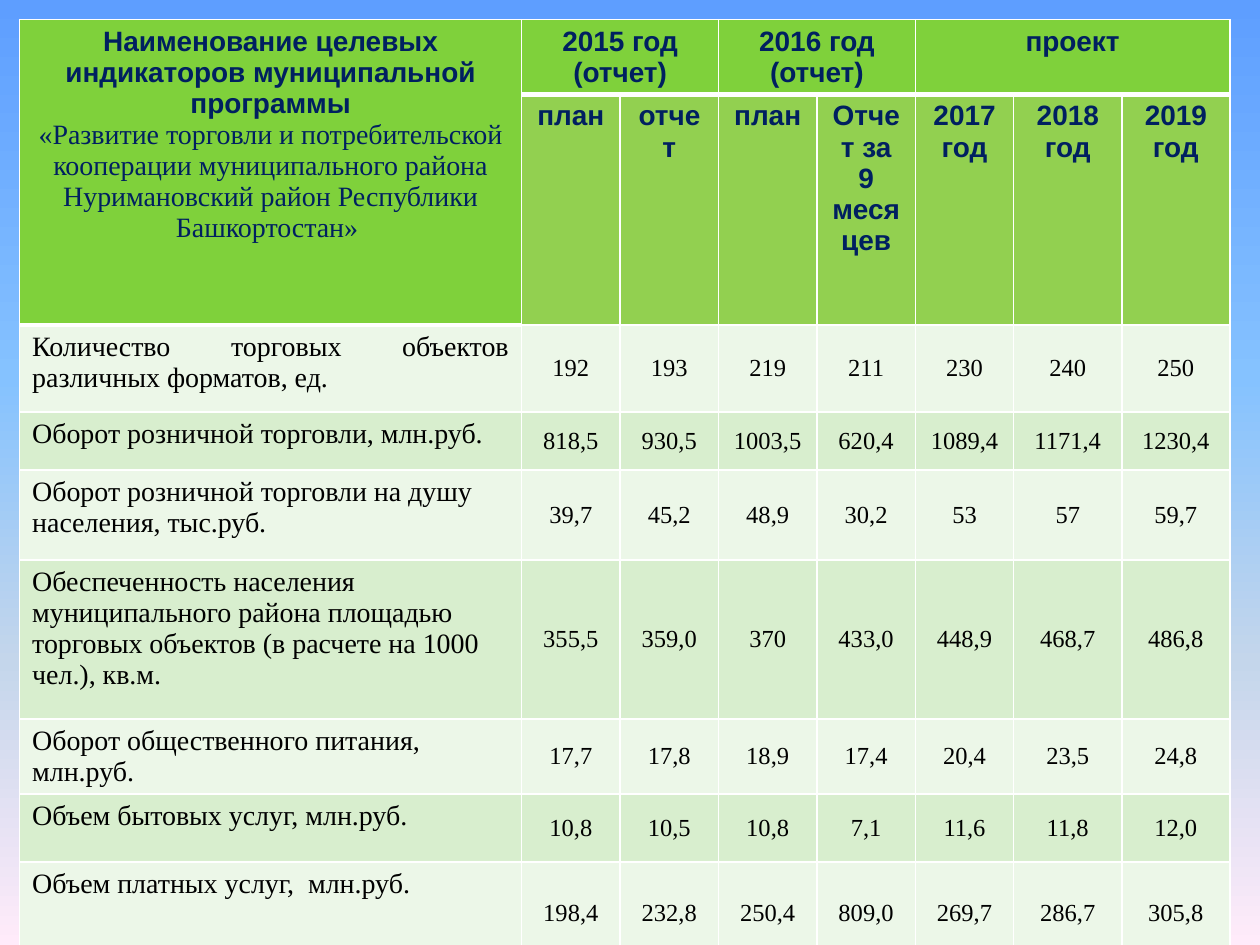
from lxml.etree import SubElement as Sub
from pptx import Presentation
from pptx.dml.color import RGBColor as RGB
from pptx.enum.text import MSO_ANCHOR as ANCHOR, PP_ALIGN as ALIGN
from pptx.oxml.ns import qn
from pptx.util import Pt

COLORS = {"header": "7FD13B", "subheader": "92D050", "light": "ECF7E8", "dark": "D8EECE",
          "navy": "002060", "black": "000000", "border": "FFFFFF"}
SKY = [(0, "5E9EFF"), (40, "85C2FF"), (70, "C4D6EB"), (100, "FFEBFA")]
SANS, SERIF = "Arial", "Times New Roman"

TITLE = "Наименование целевых индикаторов муниципальной программы"
PROGRAM = ("«Развитие торговли и потребительской кооперации муниципального района "
           "Нуримановский район Республики Башкортостан» ")
GROUPS = [("2015 год (отчет)", 1, 2), ("2016 год (отчет)", 3, 4), ("проект", 5, 7)]
SUBHEADS = ["план", "отчет", "план", "Отчет за 9 меся цев", "2017 год", "2018 год", "2019 год"]
INDICATORS = [
    ("Количество торговых объектов различных форматов, ед.",
     ["192", "193", "219", "211", "230", "240", "250"]),
    ("Оборот розничной торговли, млн.руб.",
     ["818,5", "930,5", "1003,5", "620,4", "1089,4", "1171,4", "1230,4"]),
    ("Оборот розничной торговли на душу населения, тыс.руб.",
     ["39,7", "45,2", "48,9", "30,2", "53", "57", "59,7"]),
    ("Обеспеченность населения муниципального района площадью торговых объектов "
     "(в расчете на 1000 чел.), кв.м.",
     ["355,5", "359,0", "370", "433,0", "448,9", "468,7", "486,8"]),
    ("Оборот общественного питания, млн.руб.",
     ["17,7", "17,8", "18,9", "17,4", "20,4", "23,5", "24,8"]),
    ("Объем бытовых услуг, млн.руб.",
     ["10,8", "10,5", "10,8", "7,1", "11,6", "11,8", "12,0"]),
    ("Объем платных услуг,  млн.руб.",
     ["198,4", "232,8", "250,4", "809,0", "269,7", "286,7", "305,8"]),
]
LEFT, TOP, HEIGHT = 11.2, 11.2, 498
WIDTHS = [286.9] + [56.25] * 5 + [61.75] * 2
HEIGHTS = [28, 70.6, 49.8, 33.1, 51.6, 90.8, 33.8, 38.9, 59]


def color_fill(parent, color):
    Sub(Sub(parent, qn("a:solidFill")), qn("a:srgbClr"), val=color)


def style_cell(cell, fill, bottom=1):
    tc_pr = cell._tc.get_or_add_tcPr()
    for side, width in (("L", 1), ("R", 1), ("T", 1), ("B", bottom)):
        ln = Sub(tc_pr, qn(f"a:ln{side}"), w=str(Pt(width)))
        color_fill(ln, COLORS["border"])
    cell.fill.solid()
    cell.fill.fore_color.rgb = RGB.from_string(COLORS[fill])


def write(p, text, size, font, color, bold=False, align=ALIGN.CENTER):
    p.alignment = align
    r = p.add_run()
    r.text = text
    r.font.size, r.font.name, r.font.bold = Pt(size), font, bold
    r.font.color.rgb = RGB.from_string(COLORS[color])


def paint_background(slide):
    fill = slide.background.fill
    fill.gradient()
    fill.gradient_angle = 270
    stops = slide.element.find(".//" + qn("a:gsLst"))
    for gs in list(stops):
        stops.remove(gs)
    for pos, color in SKY:
        gs = Sub(stops, qn("a:gs"), pos=str(pos * 1000))
        Sub(gs, qn("a:srgbClr"), val=color)


def main():
    prs = Presentation()
    prs.slide_width, prs.slide_height = Pt(720), Pt(540)
    slide = prs.slides.add_slide(prs.slide_layouts[6])
    paint_background(slide)

    frame = slide.shapes.add_table(len(HEIGHTS), len(WIDTHS), Pt(LEFT), Pt(TOP),
                                   Pt(sum(WIDTHS)), Pt(HEIGHT))
    table = frame.table
    table.first_row = table.horz_banding = False
    for col, width in zip(table.columns, WIDTHS):
        col.width = Pt(width)
    for row, height in zip(table.rows, HEIGHTS):
        row.height = Pt(height)

    for c in range(len(WIDTHS)):
        style_cell(table.cell(0, c), "header", 3)
    style_cell(table.cell(1, 0), "header", 3)
    title = table.cell(0, 0)
    title.merge(table.cell(1, 0))
    write(title.text_frame.paragraphs[0], TITLE, 16, SANS, "navy", True)
    write(title.text_frame.add_paragraph(), PROGRAM, 16, SERIF, "navy")
    for text, first, last in GROUPS:
        cell = table.cell(0, first)
        cell.merge(table.cell(0, last))
        write(cell.text_frame.paragraphs[0], text, 16, SANS, "navy", True)
    for c, text in enumerate(SUBHEADS, 1):
        cell = table.cell(1, c)
        style_cell(cell, "subheader")
        write(cell.text_frame.paragraphs[0], text, 16, SANS, "navy", True)

    for i, (name, values) in enumerate(INDICATORS):
        fill = "dark" if i % 2 else "light"
        for c, text in enumerate([name] + values):
            cell = table.cell(i + 2, c)
            style_cell(cell, fill)
            p = cell.text_frame.paragraphs[0]
            if c:
                cell.vertical_anchor = ANCHOR.MIDDLE
                write(p, text, 14, SERIF, "black")
            else:
                align = ALIGN.LEFT if i else ALIGN.JUSTIFY
                write(p, text, 16, SERIF, "black", align=align)

    prs.save("out.pptx")


if __name__ == "__main__":
    main()
